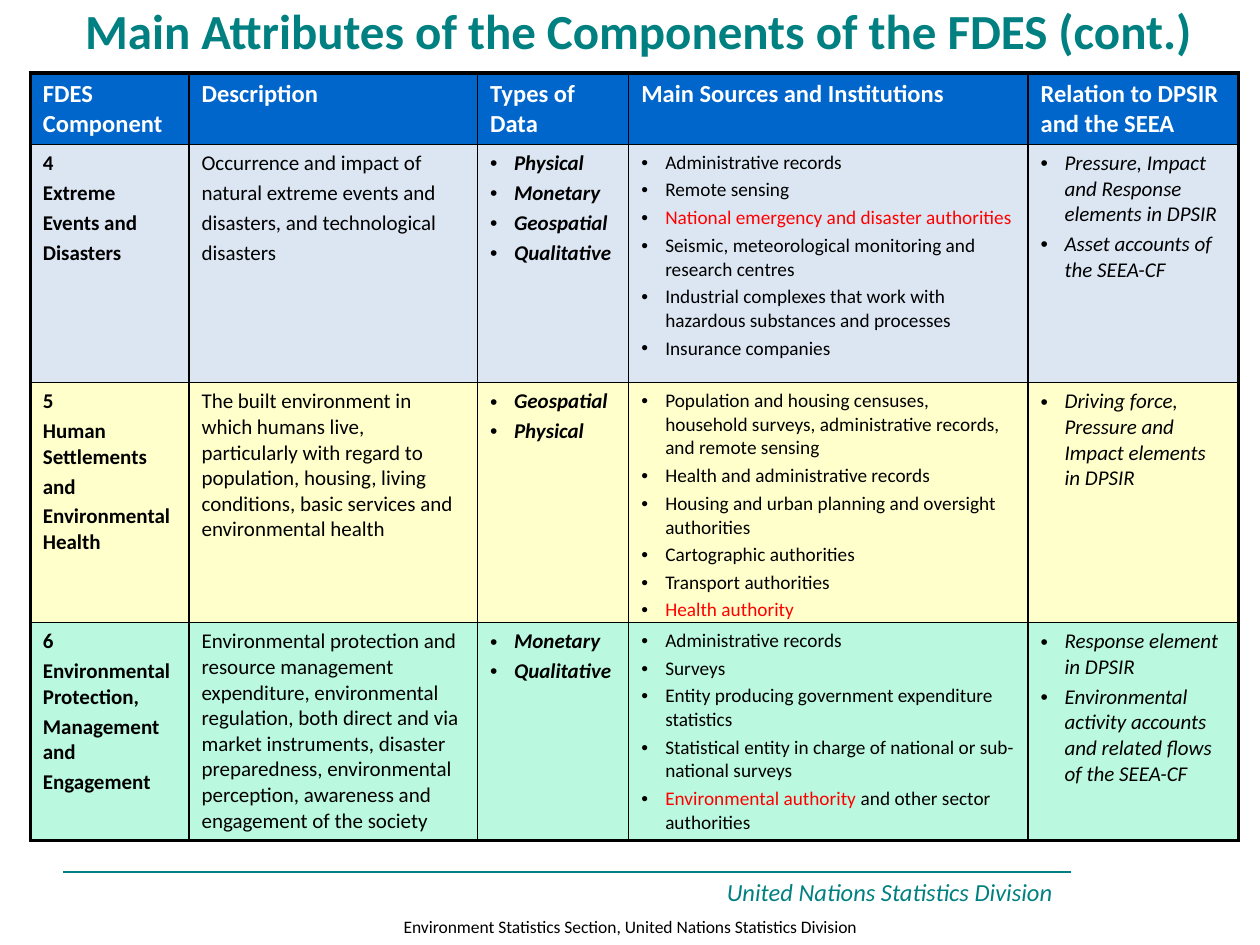
from dataclasses import dataclass

from lxml.etree import SubElement
from pptx import Presentation
from pptx.dml.color import RGBColor
from pptx.enum.shapes import MSO_CONNECTOR
from pptx.enum.text import MSO_ANCHOR, MSO_AUTO_SIZE, PP_ALIGN
from pptx.oxml.ns import qn
from pptx.util import Inches, Pt


@dataclass(frozen=True)
class Theme:
    """Hold the colours, type sizes and line widths of the slide."""
    font: str = "Calibri"
    teal: str = "008080"
    black: str = "000000"
    white: str = "FFFFFF"
    alert: str = "FF0000"
    header_fill: str = "0066CC"
    row_fills: tuple = ("DCE6F2", "FFFFCC", "BAF8E0")
    title_size: int = 28
    header_size: int = 14
    body_size: int = 12
    source_size: int = 11
    note_size: int = 10
    outer_line: float = 2.25
    inner_line: float = 1
    rule_line: float = 1.5


THEME = Theme()
COLUMN_WIDTHS = (1.26, 2.29, 1.2, 3.17, 1.67)
ROW_HEIGHTS = (0.55, 1.89, 1.86, 1.73)
BULLET_INDENT = Inches(0.19)
COLUMN_FORMATS = (
    dict(size=THEME.body_size, bold=True),
    dict(size=THEME.body_size),
    dict(size=THEME.body_size, bold=True, italic=True, bullet=True),
    dict(size=THEME.source_size, bullet=True),
    dict(size=THEME.body_size, italic=True, bullet=True),
)
HEADERS = ("FDES Component", "Description", "Types of Data",
           "Main Sources and Institutions", "Relation to DPSIR and the SEEA")
COMPONENTS = (
    (
        ("4", "Extreme", "Events and", "Disasters"),
        ("Occurrence and impact of", "natural extreme events and",
         "disasters, and technological", "disasters"),
        ("Physical", "Monetary", "Geospatial", "Qualitative"),
        ("Administrative records", "Remote sensing",
         {"alert": "National emergency and disaster authorities"},
         "Seismic, meteorological monitoring and research centres",
         "Industrial complexes that work with hazardous substances and processes",
         "Insurance companies"),
        ("Pressure, Impact and Response elements in DPSIR",
         "Asset accounts of the SEEA-CF"),
    ),
    (
        ("5", "Human Settlements", "and", "Environmental Health"),
        ("The built environment in which humans live, particularly with regard to "
         "population, housing, living conditions, basic services and "
         "environmental health",),
        ("Geospatial", "Physical"),
        ("Population and housing censuses, household surveys, administrative "
         "records, and remote sensing",
         "Health and administrative records",
         "Housing and urban planning and oversight authorities",
         "Cartographic authorities", "Transport authorities",
         {"alert": "Health authority"}),
        ("Driving force, Pressure and Impact elements in DPSIR",),
    ),
    (
        ("6", "Environmental Protection,", "Management and", "Engagement"),
        ("Environmental protection and resource management expenditure, "
         "environmental regulation, both direct and via market instruments, "
         "disaster preparedness, environmental perception, awareness and "
         "engagement of the society",),
        ("Monetary", "Qualitative"),
        ("Administrative records", "Surveys",
         "Entity producing government expenditure statistics",
         "Statistical entity in charge of national or sub-national surveys",
         {"alert": "Environmental authority ",
          "black": "and other sector authorities"}),
        ("Response element in DPSIR",
         "Environmental activity accounts and related flows of the SEEA-CF"),
    ),
)


def add_span(para, text, *, size, color=THEME.black, bold=False, italic=False):
    """Add one formatted span of text to a paragraph."""
    span = para.add_run()
    span.text = text
    span.font.name = THEME.font
    span.font.size = Pt(size)
    span.font.bold = bold
    span.font.italic = italic
    span.font.color.rgb = RGBColor.from_string(color)


def add_bullet(para):
    """Give a paragraph a black bullet with a hanging indent."""
    properties = para._p.get_or_add_pPr()
    properties.set("marL", str(BULLET_INDENT))
    properties.set("indent", str(-BULLET_INDENT))
    color = SubElement(properties, qn("a:buClr"))
    SubElement(color, qn("a:srgbClr"), val=THEME.black)
    SubElement(properties, qn("a:buFont"), typeface="Arial")
    SubElement(properties, qn("a:buChar"), char="•")


def add_text_box(slide, text, left, top, width, height, *, align=PP_ALIGN.CENTER,
                 anchor=MSO_ANCHOR.TOP, wrap=True, fit=MSO_AUTO_SIZE.NONE, **style):
    """Add a text box that holds one line."""
    box = slide.shapes.add_textbox(*map(Inches, (left, top, width, height)))
    frame = box.text_frame
    frame.word_wrap = wrap
    frame.auto_size = fit
    frame.vertical_anchor = anchor
    para = frame.paragraphs[0]
    para.alignment = align
    add_span(para, text, **style)


def add_rule(slide, left, top, right):
    """Add the horizontal rule above the footer."""
    rule = slide.shapes.add_connector(
        MSO_CONNECTOR.STRAIGHT, *map(Inches, (left, top, right, top)))
    rule.line.color.rgb = RGBColor.from_string(THEME.teal)
    rule.line.width = Pt(THEME.rule_line)
    SubElement(rule._element.spPr, qn("a:effectLst"))


def set_borders(cell, outer_sides):
    """Draw four black cell borders, heavier on the table's outer sides."""
    properties = cell._tc.get_or_add_tcPr()
    for side in "LRTB":
        width = THEME.outer_line if side in outer_sides else THEME.inner_line
        line = SubElement(properties, qn(f"a:ln{side}"), w=str(Pt(width)))
        fill = SubElement(line, qn("a:solidFill"))
        SubElement(fill, qn("a:srgbClr"), val=THEME.black)


def fill_cell(cell, entries, fill, *, size, bullet=False, **style):
    """Fill a cell with colour and one paragraph for each entry."""
    cell.fill.solid()
    cell.fill.fore_color.rgb = RGBColor.from_string(fill)
    frame = cell.text_frame
    for index, entry in enumerate(entries):
        para = frame.add_paragraph() if index else frame.paragraphs[0]
        if index:
            para.space_before = Pt(size * 0.2)
        if bullet:
            add_bullet(para)
        if isinstance(entry, dict):
            for color, text in entry.items():
                add_span(para, text, size=size, **{**style, "color": getattr(THEME, color)})
        else:
            add_span(para, entry, size=size, **style)


def add_component_table(slide, left, top):
    """Add the table of components and their attributes."""
    row_count, column_count = len(ROW_HEIGHTS), len(COLUMN_WIDTHS)
    table = slide.shapes.add_table(
        row_count, column_count, Inches(left), Inches(top),
        Inches(sum(COLUMN_WIDTHS)), Inches(sum(ROW_HEIGHTS))).table
    table.horz_banding = False
    for column, width in zip(table.columns, COLUMN_WIDTHS):
        column.width = Inches(width)
    for row, height in zip(table.rows, ROW_HEIGHTS):
        row.height = Inches(height)
    for r in range(row_count):
        for c in range(column_count):
            cell = table.cell(r, c)
            edges = {"L": c == 0, "R": c == column_count - 1,
                     "T": r == 0, "B": r == row_count - 1}
            set_borders(cell, [side for side, outer in edges.items() if outer])
            if r == 0:
                fill_cell(cell, [HEADERS[c]], THEME.header_fill,
                          size=THEME.header_size, color=THEME.white, bold=True)
            else:
                fill_cell(cell, COMPONENTS[r - 1][c], THEME.row_fills[r - 1],
                          **COLUMN_FORMATS[c])


def main():
    """Build the slide and save the deck."""
    deck = Presentation()
    deck.slide_width, deck.slide_height = Inches(10), Inches(7.5)
    page = deck.slides.add_slide(deck.slide_layouts[6])
    add_rule(page, 0.5, 6.92, 8.5)
    add_text_box(page, "United Nations Statistics Division", 5.67, 6.91, 2.83, 0.34,
                 align=PP_ALIGN.LEFT, wrap=False, fit=MSO_AUTO_SIZE.SHAPE_TO_FIT_TEXT,
                 size=THEME.header_size, color=THEME.teal, italic=True)
    add_text_box(page, "Main Attributes of the Components of the FDES (cont.)",
                 0.33, 0.05, 9.47, 0.47, anchor=MSO_ANCHOR.BOTTOM,
                 size=THEME.title_size, color=THEME.teal, bold=True)
    add_component_table(page, 0.24, 0.58)
    add_text_box(page, "Environment Statistics Section, United Nations Statistics Division",
                 1.94, 7.22, 6.12, 0.33, size=THEME.note_size)
    deck.save("out.pptx")


if __name__ == "__main__":
    main()
